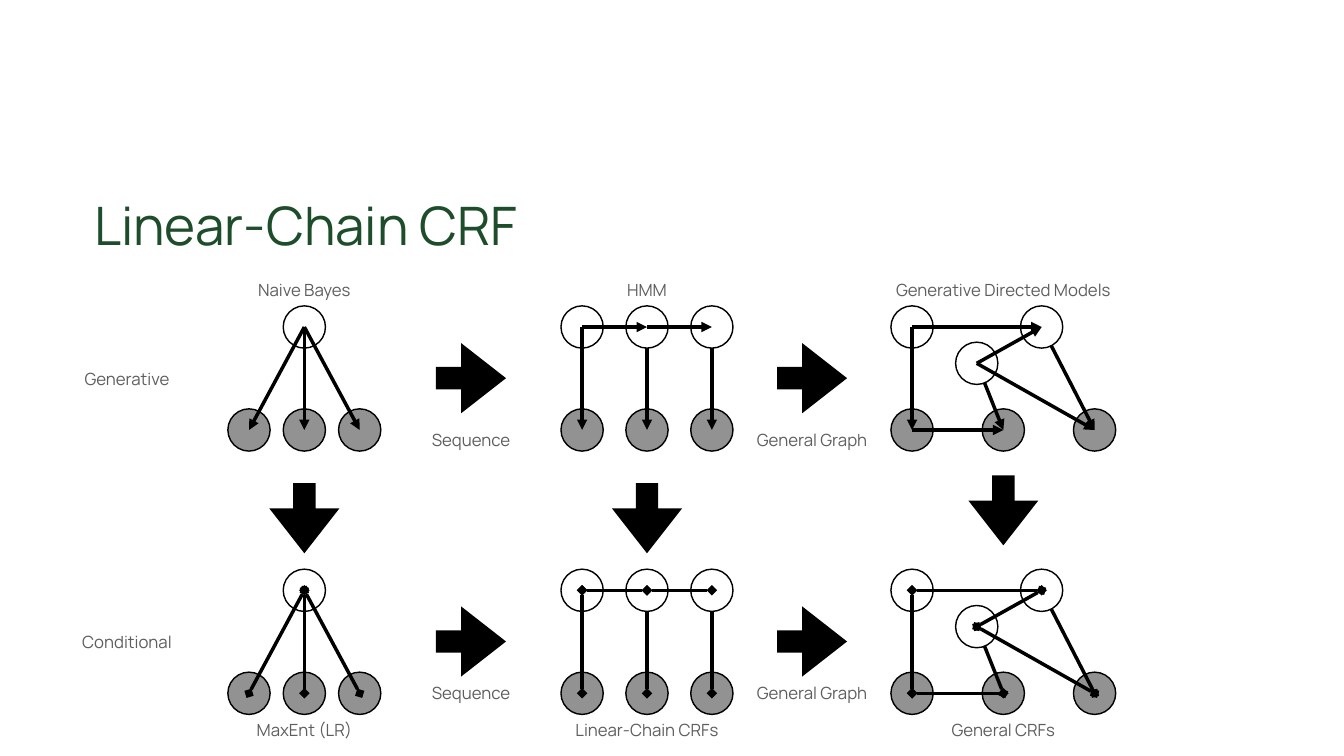
from lxml import etree
from pptx import Presentation
from pptx import util as u
from pptx.dml.color import RGBColor
from pptx.enum import shapes, text
from pptx.oxml.ns import qn

THEME = {
    "font": "Manrope", "title": 75.7, "label": 24,
    "green": "1E4D2B", "gray": "5E5E5E", "black": "000000",
    "white": "FFFFFF", "seen": "929292",
    "rim": 2, "edge": 5,
}

# All lengths are in centimetres.
SIZE = (67.74, 38.1)
NODE, ARROW, TALL = 2.13, 3.53, 1.42
TOP, MID, LOW = 16.48, 18.31, 21.67
DROP = 13.27                       # from the generative to the conditional row
ENDS = [{"tailEnd": "triangle"}, {"headEnd": "diamond", "tailEnd": "diamond"}]
COLS = (15.34, 32.61, 50.57)       # middle of each model


def spread(mid, gap):
    return [mid + i * gap for i in (-1, 0, 1)]


def rank(names, xs, y):
    return {name: (x, y) for name, x in zip(names, xs)}


BAYES = spread(COLS[0], 2.79)
CHAIN = spread(COLS[1], 3.27)
GRAPH = spread(COLS[2], 4.6)

# Each model: node centres, then layers of (nodes, edges) from back to front.
# Capitals are hidden nodes, small letters are observed ones.
MODELS = [
    ({"A": (COLS[0], TOP), **rank("abc", BAYES, LOW)},
     [("Abca", "Ac Ab Aa")]),
    ({**rank("ABC", CHAIN, TOP), **rank("abc", CHAIN, LOW)},
     [("Abca", "Cc Bb Aa"), ("BC", "AB BC")]),
    ({"A": (GRAPH[0], TOP), "B": (52.5, TOP), "C": (49.23, MID),
      **rank("abc", GRAPH, LOW)},
     [("Acba", "Cb Bc Aa"), ("BC", "AB CB Cc ab")]),
]

# Block arrows: centre x, centre y, rotation
STEPS = [(x, 19.06 + row * DROP, 0) for row in (0, 1) for x in (40.93, 23.74)]
STEPS += [(COLS[2], 25.72, 90), (COLS[0], 26.12, 90), (COLS[1], 26.12, 90)]

# Labels: words, centre x, centre y, width
LABELS = [
    ("Sequence", 23.74, 22.17, 4.57),
    ("General Graph", 40.93, 22.17, 6.55),
    ("Sequence", 23.74, 34.93, 4.57),
    ("General Graph", 40.93, 34.93, 6.55),
    ("Generative", 6.4, 19.08, 4.98),
    ("Conditional", 6.4, 32.33, 5.21),
    ("Naive Bayes", COLS[0], 14.58, 5.46),
    ("HMM", COLS[1], 14.58, 2.36),
    ("Generative Directed Models", COLS[2], 14.58, 12.01),
    ("General CRFs", COLS[2], 36.8, 5.92),
    ("Linear-Chain CRFs", COLS[1], 36.8, 8.1),
    ("MaxEnt (LR)", COLS[0], 36.8, 5.18),
]


def color(name):
    return RGBColor.from_string(THEME[name])


def box(x, y, w, h):
    """Turn a centre and a size into left, top, width, height."""
    return [u.Cm(v) for v in (x - w / 2, y - h / 2, w, h)]


def solid(home, kind, x, y, size, fill):
    shape = home.add_shape(kind, *box(x, y, size, size))
    shape.shadow.inherit = False
    shape.fill.solid()
    shape.fill.fore_color.rgb = color(fill)
    return shape


def node(home, name, x, y):
    fill = "white" if name.isupper() else "seen"
    shape = solid(home, shapes.MSO_SHAPE.OVAL, x, y, NODE, fill)
    shape.line.color.rgb = color("black")
    shape.line.width = u.Pt(THEME["rim"])


def edge(home, start, end, tips):
    ends = [u.Cm(v) for v in (*start, *end)]
    wire = home.add_connector(shapes.MSO_CONNECTOR.STRAIGHT, *ends)
    wire.line.color.rgb = color("black")
    wire.line.width = u.Pt(THEME["edge"])
    line = wire.line._get_or_add_ln()
    for tag, kind in tips.items():
        etree.SubElement(line, qn("a:" + tag), type=kind)
    etree.SubElement(wire._element.spPr, qn("a:effectLst"))


def model(slide, spots, layers, row):
    home = slide.shapes.add_group_shape().shapes
    spots = {name: (x, y + row * DROP) for name, (x, y) in spots.items()}
    for names, pairs in layers:
        for name in dict.fromkeys(names):
            node(home, name, *spots[name])
        for start, end in pairs.split():
            edge(home, spots[start], spots[end], ENDS[row])


def arrow(slide, x, y, turn):
    kind = shapes.MSO_SHAPE.RIGHT_ARROW
    shape = solid(slide.shapes, kind, x, y, ARROW, "black")
    shape.line.fill.background()
    shape.adjustments[0], shape.adjustments[1] = 0.32, 0.64
    shape.rotation = turn


def write(slide, words, place, size, ink, pad):
    """Add a one-line text box and return its frame."""
    frame = slide.shapes.add_textbox(*place).text_frame
    frame.margin_left = frame.margin_right = u.Cm(pad)
    frame.margin_top = frame.margin_bottom = u.Cm(pad)
    frame.text = words
    font = frame.paragraphs[0].runs[0].font
    font.name, font.size = THEME["font"], u.Pt(THEME[size])
    font.color.rgb = color(ink)
    return frame


def label(slide, words, x, y, wide):
    frame = write(slide, words, box(x, y, wide, TALL), "label", "gray", 0.15)
    frame.word_wrap = False
    frame.vertical_anchor = text.MSO_ANCHOR.MIDDLE
    frame.paragraphs[0].alignment = text.PP_ALIGN.CENTER


def main():
    deck = Presentation()
    deck.slide_width, deck.slide_height = [u.Cm(v) for v in SIZE]
    slide = deck.slides.add_slide(deck.slide_layouts[6])
    place = [u.Cm(v) for v in (4.5, 9.47, 60.76, 4.27)]
    title = write(slide, "Linear-Chain CRF", place, "title", "green", 0.25)
    title.word_wrap = True
    for row in (0, 1):
        for spots, layers in MODELS:
            model(slide, spots, layers, row)
    for step in STEPS:
        arrow(slide, *step)
    for item in LABELS:
        label(slide, *item)
    deck.save("out.pptx")


if __name__ == "__main__":
    main()
